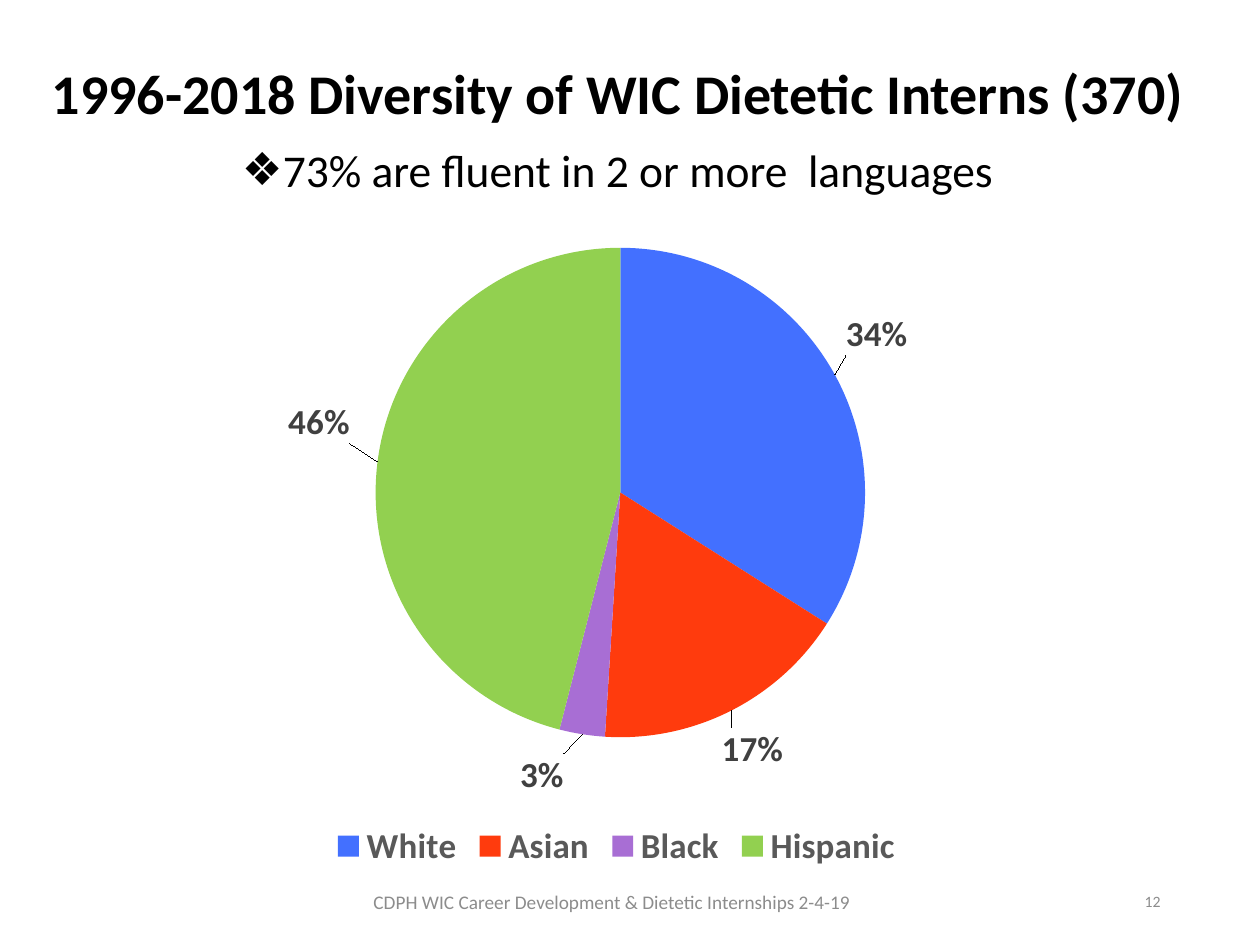
from lxml import etree
from pptx import Presentation
from pptx.chart.data import CategoryChartData
from pptx.dml.color import RGBColor
from pptx.enum.chart import XL_CHART_TYPE as CT, XL_LABEL_POSITION as LP, XL_LEGEND_POSITION as LG
from pptx.enum.text import MSO_ANCHOR as VA, PP_ALIGN as AL
from pptx.oxml.ns import qn
from pptx.util import Pt

PX = 914400 // 126
FONT = "Calibri"

TITLE = "1996-2018 Diversity of WIC Dietetic Interns (370)"
BULLET = "73% are fluent in 2 or more  languages"
FOOTER = "CDPH WIC Career Development & Dietetic Internships 2-4-19"
PAGE = "12"
# name, percent, colour, label shift from the slice edge in px
SLICES = [
    ("White", 34, "4370FF", (5, -15)),
    ("Asian", 17, "FF3B0D", (-13, 10)),
    ("Black", 3, "A86ED4", (-17, 12)),
    ("Hispanic", 46, "92D050", (-20, -17)),
]
CHART_BOX = (228, 210, 777, 665)
PLOT = {"x": 0.19, "y": 0.05, "w": 0.63, "h": 0.75}


def px(*values):
    return [v * PX for v in values]


def color(hex_code):
    return RGBColor.from_string(hex_code)


def style(font, size, hex_code, bold=False):
    font.name, font.size, font.bold = FONT, Pt(size), bold
    font.color.rgb = color(hex_code)


def text_box(slide, box, lines, align, anchor=VA.TOP):
    """Each line is (text, size, colour, bold)."""
    tf = slide.shapes.add_textbox(*px(*box)).text_frame
    tf.word_wrap = True
    tf.vertical_anchor = anchor
    for i, (text, *look) in enumerate(lines):
        p = tf.add_paragraph() if i else tf.paragraphs[0]
        p.text = text
        p.alignment = align
        style(p.runs[0].font, *look)
    return tf


def c_element(tag, **attrs):
    el = etree.Element(qn("c:" + tag))
    for key, value in attrs.items():
        el.set(key, str(value))
    return el


def manual_layout(values, inner=False):
    layout = c_element("layout")
    manual = c_element("manualLayout")
    layout.append(manual)
    if inner:
        manual.append(c_element("layoutTarget", val="inner"))
        for key in "xy":
            manual.append(c_element(key + "Mode", val="edge"))
    for key, value in values.items():
        manual.append(c_element(key, val=value))
    return layout


prs = Presentation()
prs.slide_width, prs.slide_height = px(1260, 945)
slide = prs.slides.add_slide(prs.slide_layouts[6])

# Heading and bullet line
tf = text_box(slide, (30, 60, 1176, 168),
              [(TITLE, 32, "000000", True), (BULLET, 26, "000000", False)], AL.CENTER)
heading, bullet = tf.paragraphs
for p in (heading, bullet):
    p.line_spacing = 0.9
    p.space_after = Pt(6)
bullet.space_before = Pt(6)
pPr = bullet._p.get_or_add_pPr()
pPr.set("marL", str(24 * PX))
pPr.set("indent", str(-24 * PX))
etree.SubElement(pPr, qn("a:buFont")).set("typeface", "Wingdings")
etree.SubElement(pPr, qn("a:buChar")).set("char", "❖")
pPr.find(qn("a:buFont")).set("typeface", FONT)

# Pie chart
data = CategoryChartData()
data.categories = [name for name, *_ in SLICES]
data.add_series("Series 1", [value for _, value, *_ in SLICES])
chart = slide.shapes.add_chart(CT.PIE, *px(*CHART_BOX), data).chart
style(chart.font, 10, "000000")
chart.has_title = False
chart.has_legend = True
chart.legend.position = LG.BOTTOM
chart.legend.include_in_layout = False
style(chart.legend.font, 20, "595959", True)

plot_area = chart._chartSpace.chart.plotArea
for old in plot_area.findall(qn("c:layout")):
    plot_area.remove(old)
plot_area.insert(0, manual_layout(PLOT, inner=True))

# Slices and their labels
plot = chart.plots[0]
plot.vary_by_categories = True
series = plot.series[0]
labels = series.data_labels
labels.show_percentage, labels.show_value = True, False
labels.number_format, labels.number_format_is_linked = "0%", False
labels.position = LP.OUTSIDE_END
style(labels.font, 20, "404040", True)
leader = labels._element.find(qn("c:showLeaderLines"))
if leader is None:
    leader = c_element("showLeaderLines")
    labels._element.append(leader)
leader.set("val", "1")

for i, (_, _, fill, _) in enumerate(SLICES):
    point = series.points[i]
    point.format.fill.solid()
    point.format.fill.fore_color.rgb = color(fill)
    style(point.data_label.font, 20, "404040", True)
    point.data_label.position = LP.OUTSIDE_END

for dLbl, (*_, (dx, dy)) in zip(labels._element.findall(qn("c:dLbl")), SLICES):
    shift = {"x": round(dx / CHART_BOX[2], 3), "y": round(dy / CHART_BOX[3], 3)}
    dLbl.insert(1, manual_layout(shift))
    dLbl.insert(2, c_element("numFmt", formatCode="0%", sourceLinked=0))
    dLbl.find(qn("c:showVal")).set("val", "0")
    dLbl.find(qn("c:showPercent")).set("val", "1")

# Footer and page number
text_box(slide, (343, 877, 538, 50), [(FOOTER, 11, "8C8C8C", False)], AL.CENTER, VA.MIDDLE)
text_box(slide, (890, 876, 283, 50), [(PAGE, 9, "8C8C8C", False)], AL.RIGHT, VA.MIDDLE)

prs.save("out.pptx")
